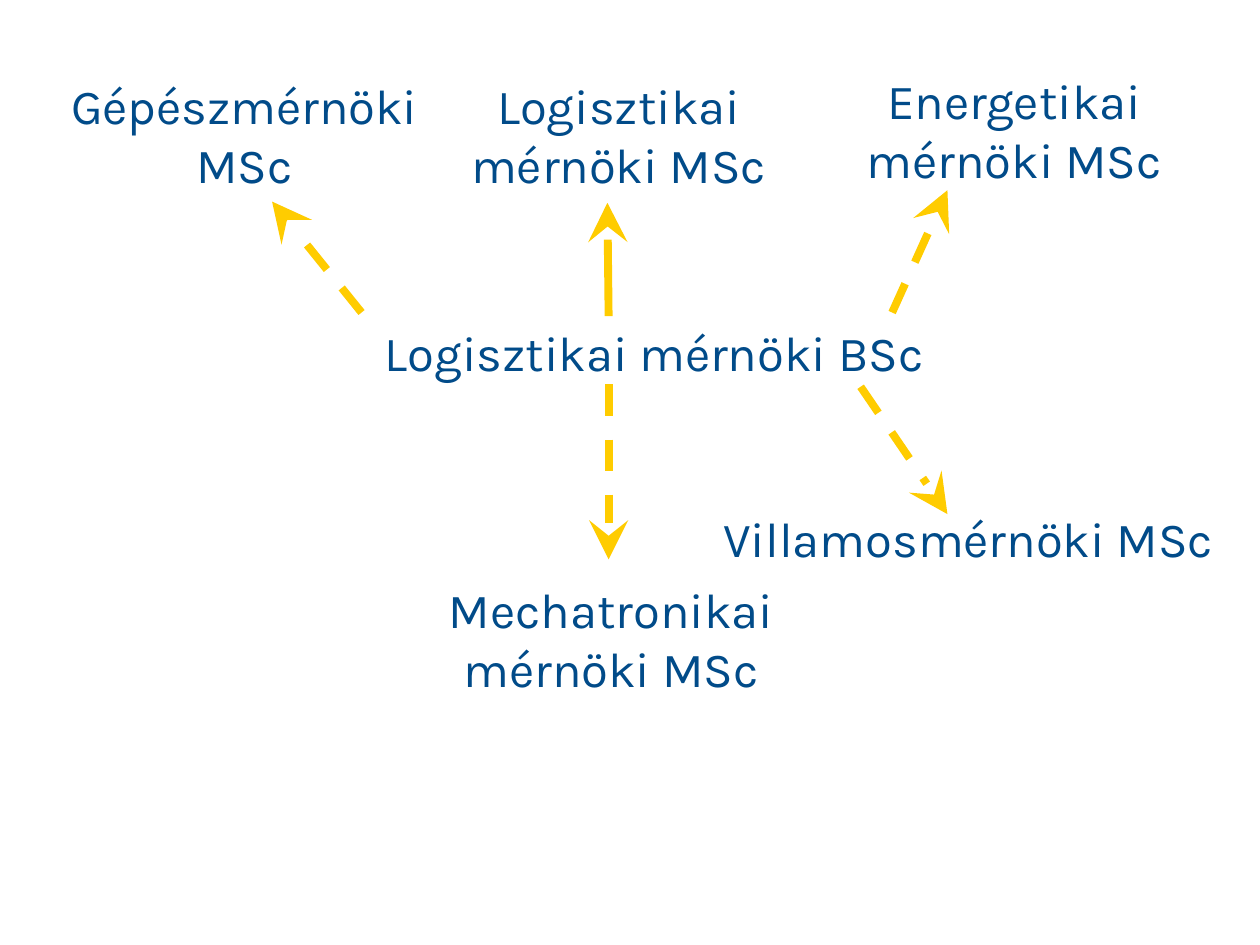
from lxml import etree
from pptx import Presentation
from pptx import util as u
from pptx.dml.color import RGBColor
from pptx.enum import dml, shapes, text
from pptx.oxml.ns import qn


def colour(code):
    return RGBColor.from_string(code)


class Diagram:
    font_name = "Karla"
    font_size = 28
    ink = "014B89"
    arrow_ink = "FFCC00"
    arrow_width = 4.5

    def __init__(self, slide):
        self.slide = slide

    def degree(self, name, left, top, width, height):
        box = self.slide.shapes.add_textbox(
            u.Pt(left), u.Pt(top), u.Pt(width), u.Pt(height))
        frame = box.text_frame
        frame.word_wrap = True
        frame.auto_size = text.MSO_AUTO_SIZE.SHAPE_TO_FIT_TEXT
        paragraph = frame.paragraphs[0]
        paragraph.text = name
        paragraph.alignment = text.PP_ALIGN.CENTER
        paragraph.font.name = self.font_name
        paragraph.font.size = u.Pt(self.font_size)
        paragraph.font.color.rgb = colour(self.ink)

    def arrow(self, start, end, dashed=True):
        path_on = self.slide.shapes.add_connector(
            shapes.MSO_CONNECTOR.STRAIGHT, *map(u.Pt, start + end))
        line = path_on.line
        line.width = u.Pt(self.arrow_width)
        line.color.rgb = colour(self.arrow_ink)
        if dashed:
            line.dash_style = dml.MSO_LINE.DASH
        properties = path_on._element.spPr
        etree.SubElement(properties.find(qn("a:ln")), qn("a:tailEnd"),
                         type="stealth", w="lg", len="lg")
        etree.SubElement(properties, qn("a:effectLst"))


def main():
    deck = Presentation()
    deck.slide_width, deck.slide_height = u.Pt(720), u.Pt(540)
    diagram = Diagram(deck.slides.add_slide(deck.slide_layouts[6]))

    degrees = [
        ("Logisztikai mérnöki BSc", 64.8, 180.7, 617.8, 41),
        ("Logisztikai mérnöki MSc", 234.7, 39.6, 237.6, 74.9),
        ("Gépészmérnöki MSc", 24.5, 39.6, 230.4, 126),
        ("Villamosmérnöki MSc", 396, 287.3, 314.6, 41),
        ("Mechatronikai mérnöki MSc", 223.2, 327.6, 252, 126),
        ("Energetikai mérnöki MSc", 458.6, 36.7, 241.9, 126),
    ]
    for degree in degrees:
        diagram.degree(*degree)

    diagram.arrow((347.8, 180.7), (347.1, 115.9), dashed=False)
    further_routes = [
        ((347.8, 219.6), (347.8, 319.7)),
        ((491.8, 221), (541.4, 293.8)),
        ((206.6, 178.6), (155.5, 115.2)),
        ((509.8, 178.6), (541.4, 108.7)),
    ]
    for start, end in further_routes:
        diagram.arrow(start, end)

    deck.save("out.pptx")


if __name__ == "__main__":
    main()
